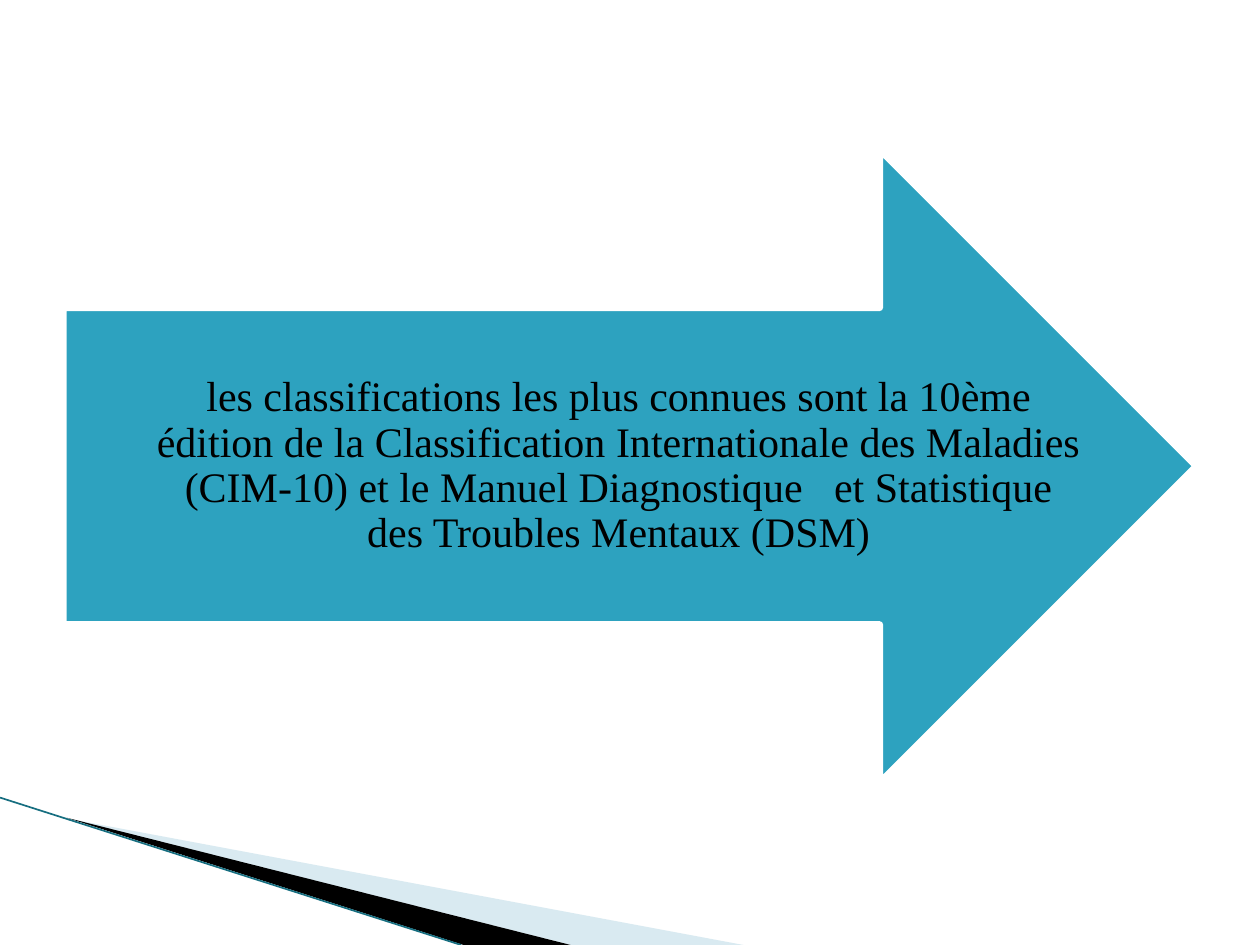
"""Build a slide with one large arrow statement above a corner of slanted wedges."""
from lxml.etree import SubElement
from pptx import Presentation
from pptx.dml.color import RGBColor
from pptx.enum.shapes import MSO_CONNECTOR, MSO_SHAPE
from pptx.enum.text import MSO_ANCHOR, PP_ALIGN
from pptx.oxml.ns import qn
from pptx.util import Inches, Pt

TEAL = RGBColor(0x2D, 0xA2, 0xBF)
DARK_TEAL = RGBColor(0x16, 0x6E, 0x80)
PALE_BLUE = RGBColor(0xA0, 0xCB, 0xDC)
BLACK = RGBColor(0, 0, 0)
WHITE = RGBColor(0xFF, 0xFF, 0xFF)

prs = Presentation()
prs.slide_width, prs.slide_height = Inches(10), Inches(7.5)
W, H = prs.slide_width, prs.slide_height
s = prs.slides.add_slide(prs.slide_layouts[6])
s.background.fill.solid()
s.background.fill.fore_color.rgb = WHITE

wedges = [
    ([(0.55, 6.5), (5.9, 7.5), (4.53, 7.5)], PALE_BLUE, 40),
    ([(0.53, 6.49), (4.53, 7.5), (3.68, 7.5)], BLACK, 100),
]
for points, color, opacity in wedges:
    corners = [(Inches(x), Inches(y)) for x, y in points]
    fb = s.shapes.build_freeform(*corners[0])
    fb.add_line_segments(corners[1:], close=True)
    sp = fb.convert_to_shape()
    sp.shadow.inherit = False
    sp.line.fill.background()
    sp.fill.solid()
    sp.fill.fore_color.rgb = color
    if opacity < 100:
        clr = sp.fill._xPr.find(".//" + qn("a:srgbClr"))
        SubElement(clr, qn("a:alpha"), val=str(opacity * 1000))

edge = s.shapes.add_connector(MSO_CONNECTOR.STRAIGHT, 0, Inches(6.33), Inches(3.66), H)
edge.line.color.rgb = DARK_TEAL
edge.line.width = Pt(0.95)
SubElement(edge._element.spPr, qn("a:effectLst"))

margin, top, arrow_h = W * 0.05, Inches(1.18), Inches(5.04)
arrow = s.shapes.add_shape(MSO_SHAPE.RIGHT_ARROW, int(margin), top, int(W - 2 * margin), arrow_h)
arrow.shadow.inherit = False
arrow.fill.solid()
arrow.fill.fore_color.rgb = TEAL
arrow.line.color.rgb = WHITE
arrow.line.width = Pt(4.33)

box = s.shapes.add_textbox(Inches(1.22), top + arrow_h // 4, Inches(7.38), arrow_h // 2)
tf = box.text_frame
tf.word_wrap = True
tf.vertical_anchor = MSO_ANCHOR.MIDDLE
tf.margin_left = tf.margin_right = 0
tf.margin_top = tf.margin_bottom = Inches(0.27)
p = tf.paragraphs[0]
p.alignment = PP_ALIGN.CENTER
p.line_spacing = 0.9
r = p.add_run()
r.text = (
    "les classifications les plus connues sont la 10ème édition de la "
    "Classification Internationale des Maladies (CIM-10) et le Manuel "
    "Diagnostique   et Statistique des Troubles Mentaux (DSM)"
)
r.font.name = "Times New Roman"
r.font.size = Pt(24)
r.font.color.rgb = BLACK

prs.save("out.pptx")
